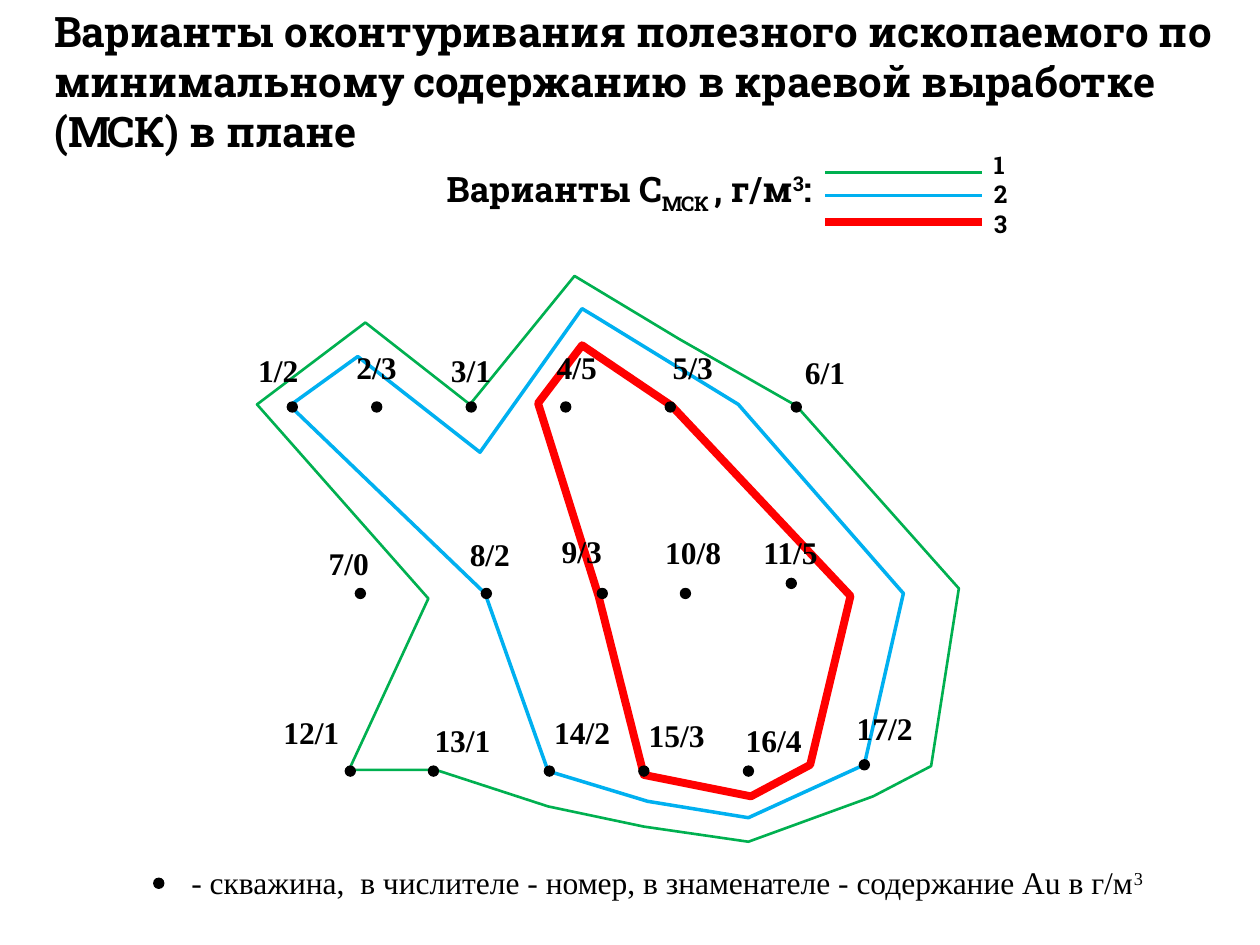
"""Builds a slide that compares ore contours drawn at three cut-off grades."""
from dataclasses import dataclass

import pptx
import pptx.dml.color
import pptx.enum.shapes
import pptx.enum.text
import pptx.oxml
import pptx.oxml.ns
import pptx.util

COLUMNS, ROWS = 10, 7.5
CELL = pptx.util.Inches(1)
ALIGN = pptx.enum.text.PP_ALIGN


@dataclass(frozen=True)
class Theme:
    ink: str = "000000"
    paper: str = "FFFFFF"
    low: str = "00B050"
    middle: str = "00B0F0"
    high: str = "FF0000"
    heading_font: str = "Roboto Slab"
    body_font: str = "Times New Roman"
    title_size: int = 24
    legend_size: int = 20
    body_size: int = 18
    key_size: int = 14
    dot: float = 0.08


THEME = Theme()

LEGEND = [(1.37, THEME.low, 1.5), (1.55, THEME.middle, 1.5), (1.76, THEME.high, 4.5)]

CONTOURS = [
    (THEME.low, 1.5, [
        (2.04, 3.21), (3.4, 4.75), (2.77, 6.11), (3.46, 6.11), (4.35, 6.4),
        (5.11, 6.56), (5.94, 6.68), (6.93, 6.32), (7.39, 6.08), (7.61, 4.67),
        (6.32, 3.22), (5.39, 2.69), (4.56, 2.19), (3.73, 3.21), (2.9, 2.56)]),
    (THEME.middle, 2, [
        (2.3, 3.22), (3.85, 4.71), (4.35, 6.12), (5.14, 6.36), (5.94, 6.49),
        (6.86, 6.07), (7.17, 4.71), (5.86, 3.21), (4.72, 2.51), (4.62, 2.45),
        (3.81, 3.59), (2.84, 2.83)]),
    (THEME.high, 4.5, [
        (4.75, 4.73), (5.11, 6.15), (5.96, 6.32), (6.43, 6.07), (6.75, 4.73),
        (5.33, 3.22), (4.62, 2.74), (4.27, 3.2)]),
]

WELLS = [
    ("1/2", (2.32, 3.23), (1.95, 2.74)),
    ("2/3", (2.99, 3.23), (2.73, 2.71)),
    ("3/1", (3.74, 3.23), (3.48, 2.74)),
    ("4/5", (4.49, 3.23), (4.32, 2.71)),
    ("5/3", (5.32, 3.23), (5.24, 2.71)),
    ("6/1", (6.32, 3.23), (6.29, 2.75)),
    ("7/0", (2.86, 4.71), (2.51, 4.27)),
    ("8/2", (3.86, 4.71), (3.63, 4.2)),
    ("9/3", (4.78, 4.71), (4.36, 4.17)),
    ("10/8", (5.44, 4.71), (5.18, 4.18)),
    ("11/5", (6.28, 4.63), (5.96, 4.18)),
    ("12/1", (2.78, 6.12), (2.15, 5.61)),
    ("13/1", (3.44, 6.12), (3.35, 5.67)),
    ("14/2", (4.36, 6.12), (4.3, 5.61)),
    ("15/3", (5.11, 6.12), (5.05, 5.63)),
    ("16/4", (5.94, 6.12), (5.82, 5.67)),
    ("17/2", (6.86, 6.07), (6.7, 5.58)),
]


def grid(*cells):
    """Turns columns and rows into slide lengths."""
    return [round(cell * CELL) for cell in cells]


def rgb(code):
    """Makes a colour from its hex code."""
    return pptx.dml.color.RGBColor.from_string(code)


def stroke(outline, color, weight):
    """Sets the colour and weight of a line."""
    outline.color.rgb = rgb(color)
    outline.width = pptx.util.Pt(weight)


def write(frame, paragraphs, size, font, bold=False, align=ALIGN.LEFT, wrap=True):
    """Fills a text frame with paragraphs of (text, baseline) runs."""
    frame.word_wrap = wrap
    frame.auto_size = pptx.enum.text.MSO_AUTO_SIZE.NONE
    frame.vertical_anchor = pptx.enum.text.MSO_ANCHOR.TOP
    for index, pieces in enumerate(paragraphs):
        paragraph = frame.add_paragraph() if index else frame.paragraphs[0]
        paragraph.alignment = align
        for text, baseline in pieces:
            run = paragraph.add_run()
            run.text = text
            run.font.name = font
            run.font.size = pptx.util.Pt(size)
            run.font.bold = bold
            run.font.color.rgb = rgb(THEME.ink)
            if baseline:
                run._r.get_or_add_rPr().set("baseline", str(baseline * 1000))


def add_text(slide, box, paragraphs, size, font, **options):
    """Adds a text box at a grid place."""
    frame = slide.shapes.add_textbox(*grid(*box)).text_frame
    write(frame, paragraphs, size, font, **options)


def add_title(slide, text):
    """Places and fills the title placeholder."""
    title = slide.shapes.title
    title.left, title.top, title.width, title.height = grid(0.33, -0.01, 9.69, 1.31)
    write(title.text_frame, [[(text, 0)]], THEME.title_size, THEME.heading_font, bold=True)


def add_dot(slide, center):
    """Adds a borehole dot around its centre."""
    size = THEME.dot
    left, top = (position - size / 2 for position in center)
    dot = slide.shapes.add_shape(
        pptx.enum.shapes.MSO_SHAPE.OVAL, *grid(left, top, size, size))
    dot.shadow.inherit = False
    dot.fill.solid()
    dot.fill.fore_color.rgb = rgb(THEME.ink)
    stroke(dot.line, THEME.ink, 0.75)


def add_contour(slide, color, weight, corners):
    """Adds a closed, unfilled outline."""
    points = [grid(*corner) for corner in corners]
    builder = slide.shapes.build_freeform(*points[0])
    builder.add_line_segments(points[1:], close=True)
    contour = builder.convert_to_shape()
    contour.shadow.inherit = False
    contour.fill.background()
    stroke(contour.line, color, weight)


def add_legend(slide):
    """Adds the cut-off grades with their line samples."""
    caption = [("Варианты С", 0), ("МСК ", -25), (", г/м", 0), ("3", 30), (":", 0)]
    add_text(slide, (3.03, 1.28, 3.51, 0.44), [caption], THEME.legend_size,
             THEME.heading_font, bold=True, align=ALIGN.RIGHT)
    for row, color, weight in LEGEND:
        sample = slide.shapes.add_connector(
            pptx.enum.shapes.MSO_CONNECTOR.STRAIGHT, *grid(6.55, row, 7.79, row))
        stroke(sample.line, color, weight)
        sample._element.spPr.append(
            pptx.oxml.parse_xml(f"<a:effectLst {pptx.oxml.ns.nsdecls('a')}/>"))
    grades = [[(str(grade), 0)] for grade in range(1, len(LEGEND) + 1)]
    add_text(slide, (7.79, 1.14, 0.33, 0.81), grades, THEME.key_size,
             THEME.heading_font, bold=True, wrap=False)


def add_well(slide, label, center, corner):
    """Adds a borehole with its number and grade."""
    add_dot(slide, center)
    width = 0.13 * (len(label) + 1)
    add_text(slide, (*corner, width, 0.4), [[(label, 0)]], THEME.body_size,
             THEME.body_font, bold=True, wrap=False)


def add_note(slide):
    """Explains the borehole sign."""
    add_dot(slide, (1.26, 7.01))
    note = "- скважина,  в числителе - номер, в знаменателе - содержание Au в г/м"
    add_text(slide, (1.42, 6.8, 7.76, 0.4), [[(note, 0), ("3", 30)]],
             THEME.body_size, THEME.body_font, wrap=False)


def main():
    """Builds and saves the slide."""
    deck = pptx.Presentation()
    deck.slide_width, deck.slide_height = grid(COLUMNS, ROWS)
    slide = deck.slides.add_slide(deck.slide_layouts.get_by_name("Title Only"))
    slide.background.fill.solid()
    slide.background.fill.fore_color.rgb = rgb(THEME.paper)
    add_title(slide, "Варианты оконтуривания полезного ископаемого по минимальному "
                     "содержанию в краевой выработке (МСК) в плане")
    add_legend(slide)
    for contour in CONTOURS:
        add_contour(slide, *contour)
    for well in WELLS:
        add_well(slide, *well)
    add_note(slide)
    deck.save("out.pptx")


main()
